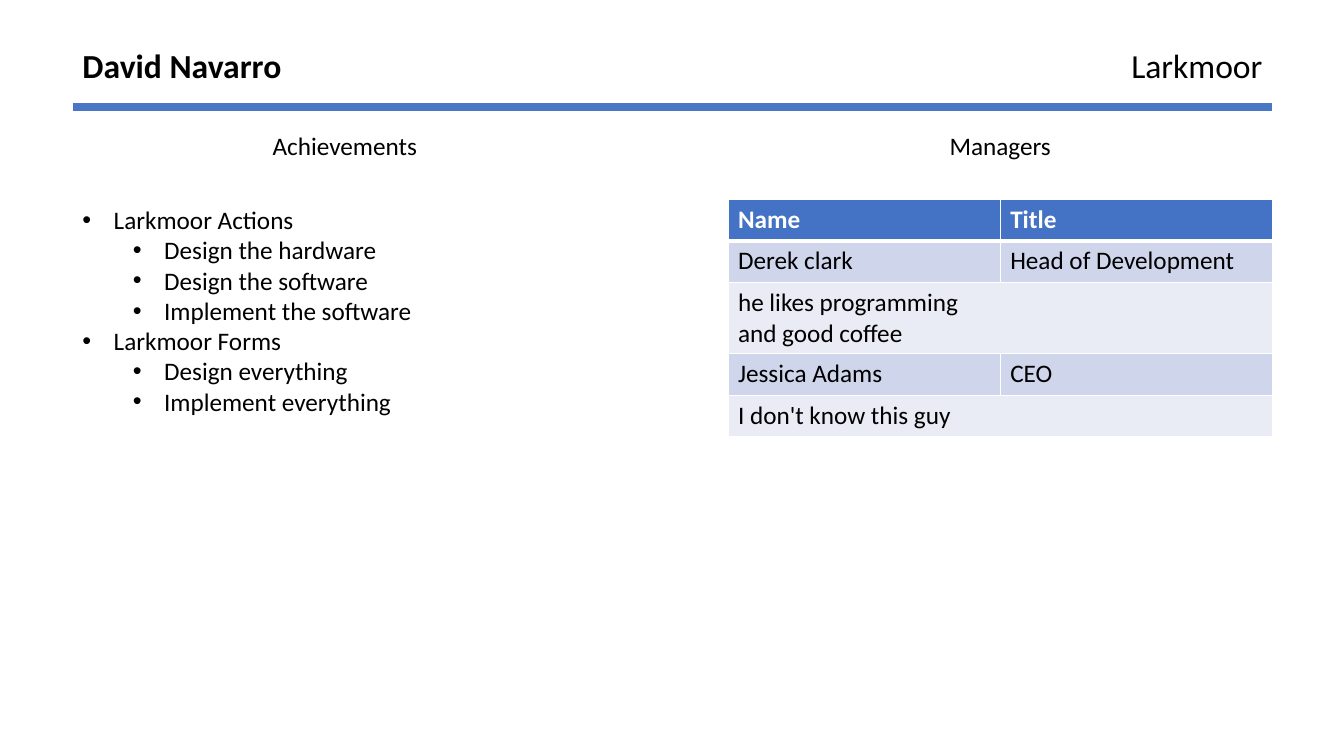
from dataclasses import dataclass

from lxml import etree
from pptx import Presentation
from pptx import util as u
from pptx.dml.color import RGBColor
from pptx.enum import shapes, text
from pptx.oxml import ns

FONT = "Calibri"
BLACK = RGBColor(0x00, 0x00, 0x00)
WHITE = RGBColor(0xFF, 0xFF, 0xFF)
RULE_BLUE = RGBColor(0x4A, 0x76, 0xC6)
HEADER_BLUE = RGBColor(0x44, 0x72, 0xC4)
BAND_DARK = RGBColor(0xCF, 0xD5, 0xEA)
BAND_LIGHT = RGBColor(0xE9, 0xEB, 0xF5)

LEFT, RIGHT, COLUMN_WIDTH = 0.72, 7.22, 5.4
TITLE_TOP, RULE_TOP, HEADING_TOP, BODY_TOP = 0.4, 1.06, 1.24, 1.98
ROW_HEIGHT, TABLE_HEIGHT = 0.41, 2.32
BULLET_HANG, LEVEL_STEP = 0.31, 0.5
ALIGN = text.PP_ALIGN


@dataclass
class Line:
    wording: str
    level: int = 0


@dataclass
class Label:
    left: float
    top: float
    height: float
    lines: list[Line]
    size: int = 18
    bold: bool = False
    align: text.PP_ALIGN = ALIGN.LEFT
    bulleted: bool = False


@dataclass
class Row:
    cells: list[str]
    fill: RGBColor
    top: int = 1
    bottom: int = 1


LABELS = [
    Label(LEFT, TITLE_TOP, 0.5, [Line("David Navarro")], 24, bold=True),
    Label(RIGHT, TITLE_TOP, 0.5, [Line("Larkmoor")], 24, align=ALIGN.RIGHT),
    Label(LEFT, HEADING_TOP, 0.4, [Line("Achievements")], align=ALIGN.CENTER),
    Label(RIGHT, HEADING_TOP, 0.4, [Line("Managers")], align=ALIGN.CENTER),
    Label(LEFT, BODY_TOP, 1.01, [
        Line("Larkmoor Actions"),
        Line("Design the hardware", 1),
        Line("Design the software", 1),
        Line("Implement the software", 1),
        Line("Larkmoor Forms"),
        Line("Design everything", 1),
        Line("Implement everything", 1),
    ], bulleted=True),
]

# A row with a single cell spans both columns
MANAGERS = [
    Row(["Name", "Title"], HEADER_BLUE, bottom=3),
    Row(["Derek clark", "Head of Development"], BAND_DARK, top=3),
    Row(["he likes programming \nand good coffee"], BAND_LIGHT),
    Row(["Jessica Adams", "CEO"], BAND_DARK),
    Row(["I don't know this guy"], BAND_LIGHT),
]


def add_run(paragraph, wording: str, size: int, color: RGBColor, bold: bool) -> None:
    run = paragraph.add_run()
    run.text = wording
    run.font.name, run.font.size, run.font.bold = FONT, u.Pt(size), bold
    run.font.color.rgb = color


def add_bullet(paragraph, level: int) -> None:
    props = paragraph._p.get_or_add_pPr()
    props.set("marL", str(u.Inches(BULLET_HANG + LEVEL_STEP * level)))
    props.set("indent", str(u.Inches(-BULLET_HANG)))
    etree.SubElement(props, ns.qn("a:buFont"), typeface="Arial")
    etree.SubElement(props, ns.qn("a:buChar"), char="•")


def add_label(slide, label: Label) -> None:
    box = slide.shapes.add_textbox(
        u.Inches(label.left), u.Inches(label.top),
        u.Inches(COLUMN_WIDTH), u.Inches(label.height))
    frame = box.text_frame
    frame.word_wrap = True
    frame.auto_size = text.MSO_AUTO_SIZE.SHAPE_TO_FIT_TEXT
    for index, line in enumerate(label.lines):
        paragraph = frame.add_paragraph() if index else frame.paragraphs[0]
        paragraph.alignment = label.align
        paragraph.level = line.level
        if label.bulleted:
            add_bullet(paragraph, line.level)
        add_run(paragraph, line.wording, label.size, BLACK, label.bold)


def set_borders(cell, row: Row) -> None:
    props = cell._tc.get_or_add_tcPr()
    widths = {"lnL": 1, "lnR": 1, "lnT": row.top, "lnB": row.bottom}
    for position, (side, width) in enumerate(widths.items()):
        border = etree.Element(ns.qn(f"a:{side}"), w=str(u.Pt(width)))
        fill = etree.SubElement(border, ns.qn("a:solidFill"))
        etree.SubElement(fill, ns.qn("a:srgbClr"), val=str(WHITE))
        props.insert(position, border)


def add_managers(slide, rows: list[Row]) -> None:
    frame = slide.shapes.add_table(
        len(rows), 2, u.Inches(RIGHT), u.Inches(BODY_TOP),
        u.Inches(COLUMN_WIDTH), u.Inches(TABLE_HEIGHT))
    table = frame.table
    for number, row in enumerate(rows):
        table.rows[number].height = u.Inches(ROW_HEIGHT)
        if len(row.cells) == 1:
            table.cell(number, 0).merge(table.cell(number, 1))
        header = number == 0
        for column in range(2):
            cell = table.cell(number, column)
            cell.fill.solid()
            cell.fill.fore_color.rgb = row.fill
            set_borders(cell, row)
            if column < len(row.cells):
                paragraph = cell.text_frame.paragraphs[0]
                for part, wording in enumerate(row.cells[column].split("\n")):
                    if part:
                        paragraph.add_line_break()
                    add_run(paragraph, wording, 18, WHITE if header else BLACK, header)


def add_rule(slide) -> None:
    rule = slide.shapes.add_connector(
        shapes.MSO_CONNECTOR.STRAIGHT, u.Inches(LEFT), u.Inches(RULE_TOP),
        u.Inches(RIGHT + COLUMN_WIDTH), u.Inches(RULE_TOP))
    rule.line.color.rgb = RULE_BLUE
    rule.line.width = u.Pt(6)
    etree.SubElement(rule._element.spPr, ns.qn("a:effectLst"))


def main() -> None:
    deck = Presentation()
    deck.slide_width, deck.slide_height = u.Inches(13.33), u.Inches(7.5)
    slide = deck.slides.add_slide(deck.slide_layouts[6])

    # Managers table
    add_managers(slide, MANAGERS)

    # Titles, headings and achievements
    for label in LABELS:
        add_label(slide, label)

    # Rule under the titles
    add_rule(slide)

    deck.save("out.pptx")


if __name__ == "__main__":
    main()
